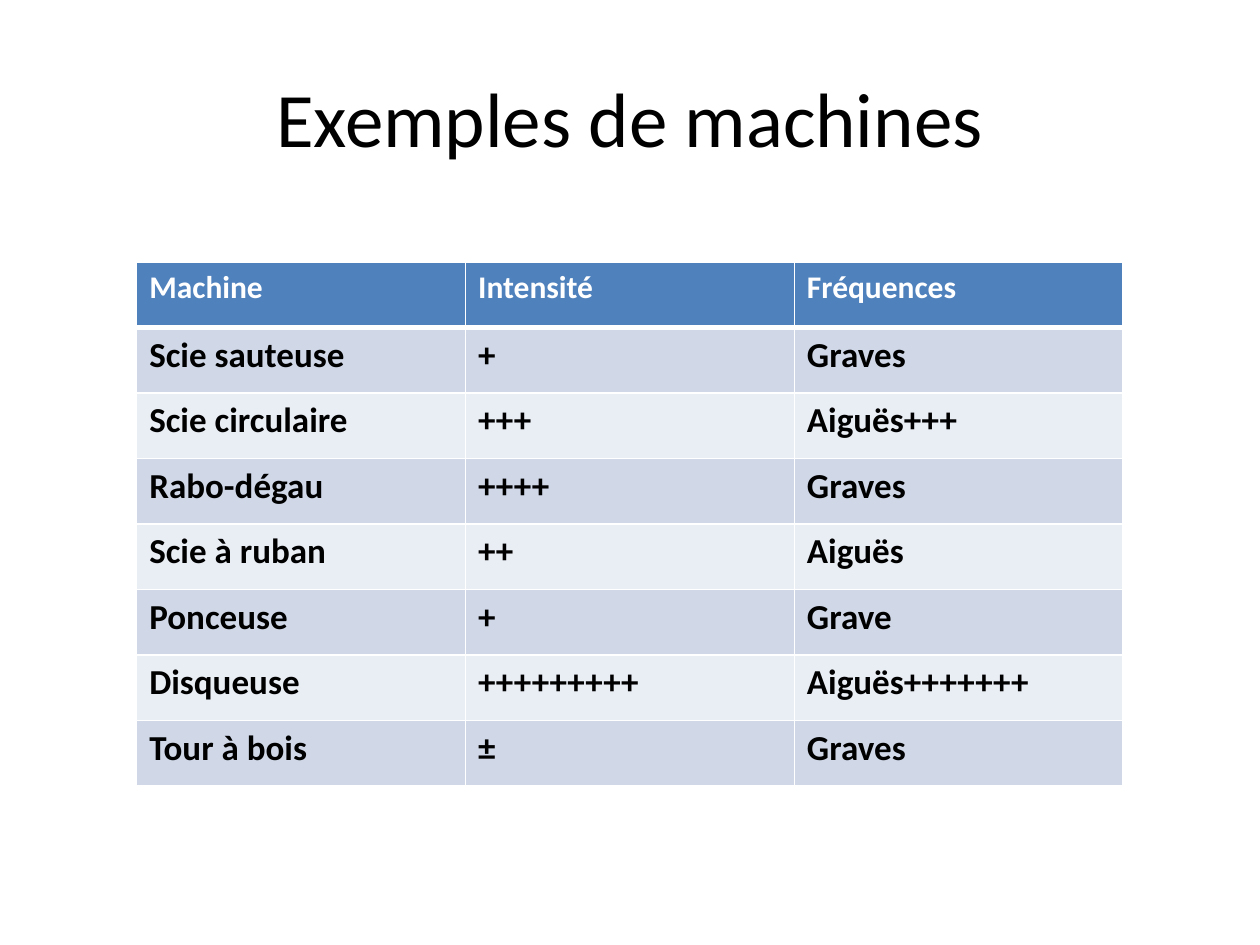
from pptx import Presentation
from pptx.dml.color import RGBColor
from pptx.enum.text import MSO_ANCHOR, PP_ALIGN
from pptx.oxml import parse_xml
from pptx.oxml.ns import nsdecls
from pptx.util import Inches, Pt


def style(run, size, tint, bold):
    run.font.name = "Calibri"
    run.font.size = Pt(size)
    run.font.bold = bold
    run.font.color.rgb = RGBColor.from_string(tint)


def edge(cell, sides, width, tint="FFFFFF"):
    for spot, side in enumerate(sides):
        line = parse_xml(
            f'<a:ln{side} {nsdecls("a")} w="{Pt(width[spot])}">'
            f'<a:solidFill><a:srgbClr val="{tint}"/></a:solidFill></a:ln{side}>'
        )
        cell._tc.get_or_add_tcPr().insert(spot, line)


rows = [
    ("Machine", "Intensité", "Fréquences"),
    ("Scie sauteuse", "+", "Graves"),
    ("Scie circulaire", "+++", "Aiguës+++"),
    ("Rabo-dégau", "++++", "Graves"),
    ("Scie à ruban", "++", "Aiguës"),
    ("Ponceuse", "+", "Grave"),
    ("Disqueuse", "+++++++++", "Aiguës+++++++"),
    ("Tour à bois", "±", "Graves"),
]

deck = Presentation()
deck.slide_width, deck.slide_height = Inches(10), Inches(7.5)
wide, high = deck.slide_width, deck.slide_height
slide = deck.slides.add_slide(deck.slide_layouts[5])

title = slide.shapes.title
title.left, title.top = int(wide * 0.05), int(high * 0.04)
title.width, title.height = int(wide * 0.9), Inches(1.25)
title.text_frame.text = "Exemples de machines"
title.text_frame.vertical_anchor = MSO_ANCHOR.MIDDLE
head = title.text_frame.paragraphs[0]
head.alignment = PP_ALIGN.CENTER
style(head.runs[0], 44, "000000", False)

col, row = Inches(2.61), Inches(0.52)
left = (wide - 3 * col) // 2
grid = slide.shapes.add_table(
    len(rows), 3, left, Inches(2.08), 3 * col, len(rows) * row
).table
for r, words in enumerate(rows):
    grid.rows[r].height = row
    fill = "4F81BD" if r == 0 else ("E9EDF4", "D0D8E8")[r % 2]
    size, tint = (18, "FFFFFF") if r == 0 else (20, "000000")
    for c, word in enumerate(words):
        grid.columns[c].width = col
        cell = grid.cell(r, c)
        cell.text_frame.text = word
        style(cell.text_frame.paragraphs[0].runs[0], size, tint, True)
        cell.fill.solid()
        cell.fill.fore_color.rgb = RGBColor.from_string(fill)
        edge(cell, "LRTB", (1, 1, 3 if r == 1 else 1, 3 if r == 0 else 1))

deck.save("out.pptx")
